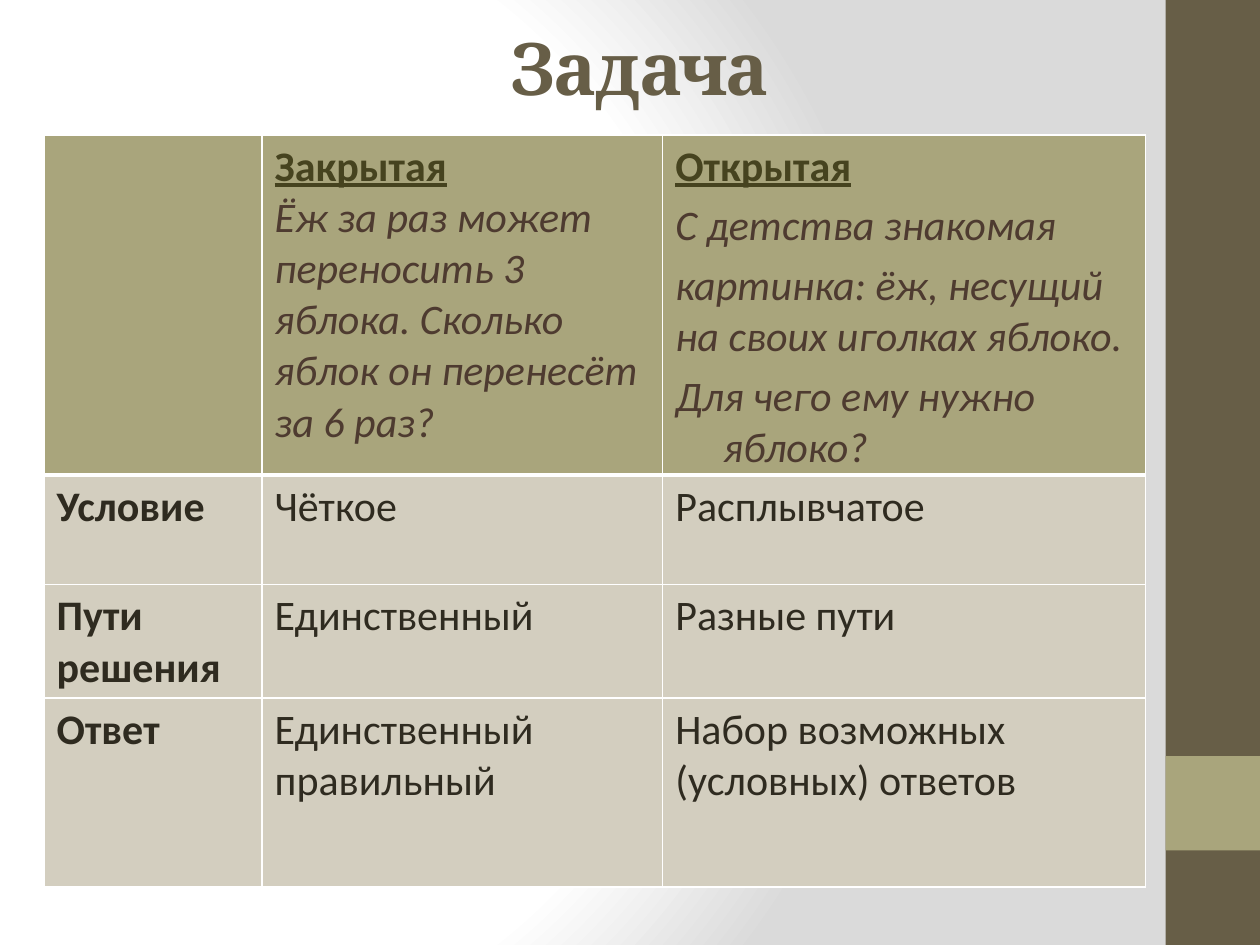
from dataclasses import dataclass, field

import pptx
import pptx.dml.color
import pptx.enum.shapes
import pptx.enum.text
import pptx.oxml
import pptx.oxml.ns
import pptx.util
from pptx.util import Inches

qn = pptx.oxml.ns.qn
NS = pptx.oxml.ns.nsdecls("a")


@dataclass(frozen=True)
class Theme:
    brown: str = "675E47"
    olive: str = "A9A57C"
    sand: str = "D3CEBF"
    white: str = "FFFFFF"
    grey: str = "DADADA"
    heading: str = "46431F"
    example: str = "4E3B30"
    body: str = "2F2B20"
    title_font: str = "Cambria"
    body_font: str = "Calibri"
    title_size: float = 41.4
    body_size: float = 24
    thin: float = 1
    thick: float = 3


THEME = Theme()


def text_format(color: str, **changes) -> dict:
    return dict(name=THEME.body_font, size=pptx.util.Pt(THEME.body_size), color=color,
                bold=False, italic=False, underline=False) | changes


TITLE = text_format(THEME.brown, name=THEME.title_font,
                    size=pptx.util.Pt(THEME.title_size), bold=True)
HEADING = text_format(THEME.heading, bold=True, underline=True)
EXAMPLE = text_format(THEME.example, italic=True)
LABEL = text_format(THEME.body, bold=True)
ANSWER = text_format(THEME.body)


@dataclass(frozen=True)
class Line:
    text: str
    style: dict
    space_before: float = 0
    hanging: float = 0


@dataclass(frozen=True)
class Cell:
    fill: str
    lines: list[Line] = field(default_factory=list)


@dataclass(frozen=True)
class Band:
    top: float
    height: float
    color: str


BANDS = [Band(0, 7.5, THEME.brown), Band(6, 0.75, THEME.olive)]
COLUMN_WIDTHS = [1.73, 3.18, 3.83]
ROW_HEIGHTS = [2.49, 0.87, 0.87, 1.5]
GAP = 0.2 * THEME.body_size

HEADER = [
    Cell(THEME.olive),
    Cell(THEME.olive, [
        Line("Закрытая", HEADING),
        Line("Ёж за раз может переносить 3 яблока. Сколько яблок он перенесёт за 6 раз?",
             EXAMPLE),
    ]),
    Cell(THEME.olive, [
        Line("Открытая", HEADING),
        Line("С детства знакомая", EXAMPLE, GAP),
        Line("картинка: ёж, несущий на своих иголках яблоко.", EXAMPLE, GAP),
        Line("Для чего ему нужно яблоко?", EXAMPLE, GAP, hanging=0.38),
    ]),
]
COMPARISON = [
    ("Условие", "Чёткое", "Расплывчатое"),
    ("Пути решения", "Единственный", "Разные пути"),
    ("Ответ", "Единственный правильный", "Набор возможных (условных) ответов"),
]


def rgb(color: str) -> pptx.dml.color.RGBColor:
    return pptx.dml.color.RGBColor.from_string(color)


def write_line(paragraph, line: Line):
    run = paragraph.add_run()
    run.text = line.text
    for attribute, value in line.style.items():
        if attribute == "color":
            run.font.color.rgb = rgb(value)
        else:
            setattr(run.font, attribute, value)
    paragraph.space_before = pptx.util.Pt(line.space_before)
    if line.hanging:
        indent = Inches(line.hanging)
        properties = paragraph._p.get_or_add_pPr()
        properties.set("marL", str(indent))
        properties.set("indent", str(-indent))
    return run


def paint_background(slide) -> None:
    """Radial gradient spreading from the left part of the slide."""
    slide.background.fill.gradient()
    gradient = next(slide.element.iter(qn("a:gradFill")))
    stops = "".join(
        f'<a:gs pos="{share * 1000}"><a:srgbClr val="{color}"/></a:gs>'
        for share, color in [(0, THEME.white), (75, THEME.white), (100, THEME.grey)])
    radial = pptx.oxml.parse_xml(
        f'<a:gradFill {NS} rotWithShape="1"><a:gsLst>{stops}</a:gsLst>'
        '<a:path path="circle">'
        '<a:fillToRect l="20000" t="50000" r="100000" b="50000"/></a:path></a:gradFill>')
    gradient.getparent().replace(gradient, radial)


def draw_band(slide, band: Band) -> None:
    bar = slide.shapes.add_shape(
        pptx.enum.shapes.MSO_SHAPE.RECTANGLE,
        Inches(9.25), Inches(band.top), Inches(0.75), Inches(band.height))
    bar.shadow.inherit = False
    bar.fill.solid()
    bar.fill.fore_color.rgb = rgb(band.color)
    bar.line.fill.background()


def draw_title(slide, title: str) -> None:
    box = slide.shapes.add_textbox(Inches(0.33), Inches(0.21), Inches(9.5), Inches(0.63))
    frame = box.text_frame
    frame.word_wrap = True
    frame.vertical_anchor = pptx.enum.text.MSO_ANCHOR.MIDDLE
    heading = frame.paragraphs[0]
    heading.alignment = pptx.enum.text.PP_ALIGN.CENTER
    run = write_line(heading, Line(title, TITLE))
    run.font._element.set("spc", "-100")


def set_borders(cell, top: float, bottom: float) -> None:
    properties = cell._tc.get_or_add_tcPr()
    widths = {"lnL": THEME.thin, "lnR": THEME.thin, "lnT": top, "lnB": bottom}
    for position, (side, width) in enumerate(widths.items()):
        properties.insert(position, pptx.oxml.parse_xml(
            f'<a:{side} {NS} w="{pptx.util.Pt(width)}"><a:solidFill>'
            f'<a:srgbClr val="{THEME.white}"/></a:solidFill></a:{side}>'))


def draw_table(slide, rows: list[list[Cell]]) -> None:
    table = slide.shapes.add_table(
        len(rows), len(COLUMN_WIDTHS), Inches(0.35), Inches(1.07),
        Inches(sum(COLUMN_WIDTHS)), Inches(sum(ROW_HEIGHTS))).table
    for column, width in zip(table.columns, COLUMN_WIDTHS):
        column.width = Inches(width)
    for row, height in zip(table.rows, ROW_HEIGHTS):
        row.height = Inches(height)
    for r, row in enumerate(rows):
        for c, content in enumerate(row):
            cell = table.cell(r, c)
            cell.fill.solid()
            cell.fill.fore_color.rgb = rgb(content.fill)
            set_borders(cell, top=THEME.thick if r == 1 else THEME.thin,
                        bottom=THEME.thick if r == 0 else THEME.thin)
            frame = cell.text_frame
            for i, line in enumerate(content.lines):
                write_line(frame.add_paragraph() if i else frame.paragraphs[0], line)


def main() -> None:
    deck = pptx.Presentation()
    deck.slide_width, deck.slide_height = Inches(10), Inches(7.5)
    slide = deck.slides.add_slide(deck.slide_layouts[6])
    paint_background(slide)
    for band in BANDS:
        draw_band(slide, band)
    draw_title(slide, "Задача")
    body = [[Cell(THEME.sand, [Line(text, style)])
             for text, style in zip(row, (LABEL, ANSWER, ANSWER))]
            for row in COMPARISON]
    draw_table(slide, [HEADER, *body])
    deck.save("out.pptx")


if __name__ == "__main__":
    main()
